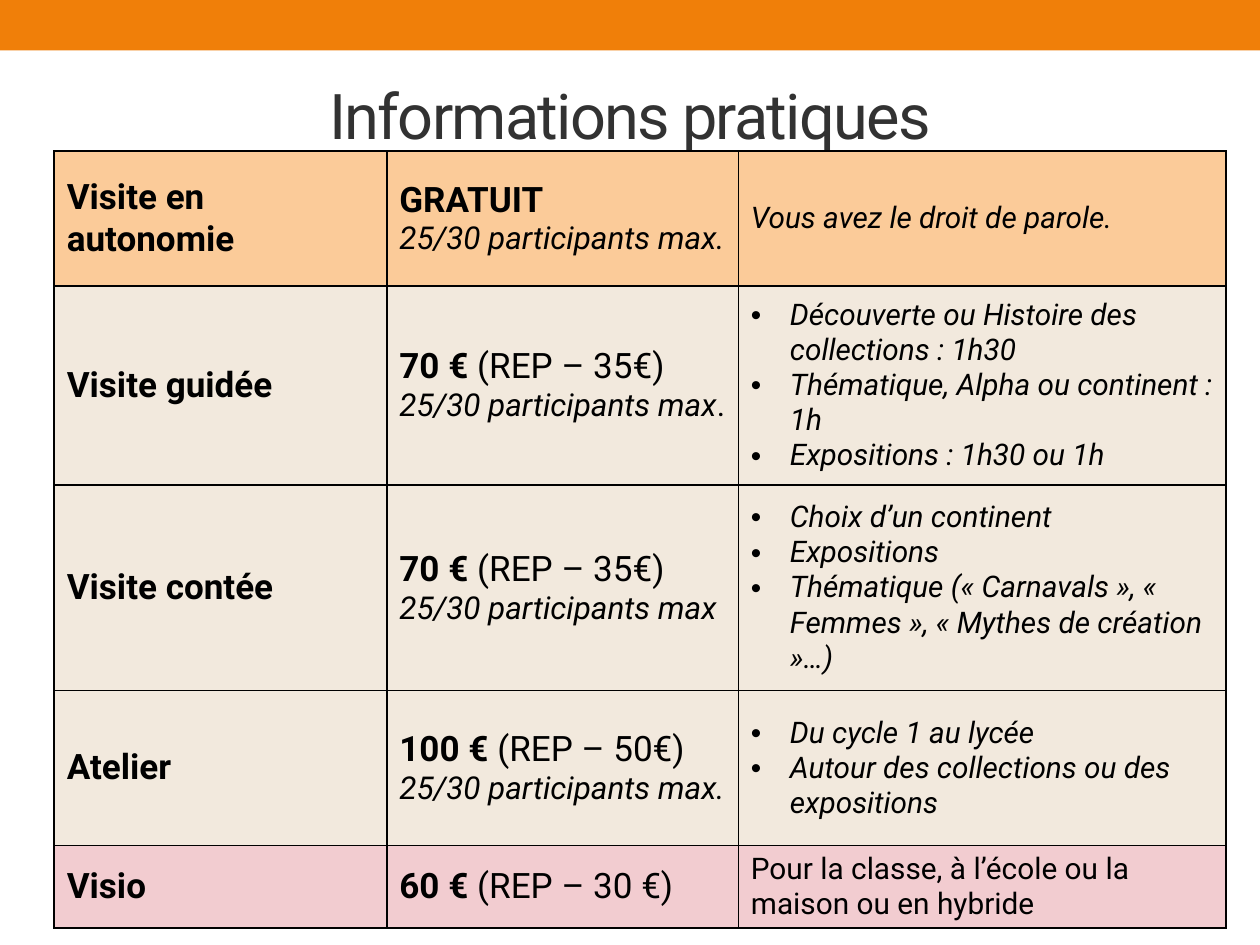
from dataclasses import dataclass

from lxml.etree import SubElement
from pptx import Presentation
from pptx.dml.color import RGBColor
from pptx.enum.shapes import MSO_SHAPE
from pptx.enum.text import MSO_ANCHOR, PP_ALIGN
from pptx.oxml.ns import qn
from pptx.util import Inches, Pt


@dataclass(frozen=True)
class Theme:
    font: str = "Roboto"
    bar: str = "F07F09"
    title: str = "323232"
    ink: str = "000000"
    free: str = "FBCB99"
    paid: str = "F2E9DD"
    remote: str = "F2CCD0"
    title_size: int = 36
    main_size: int = 20
    note_size: int = 18
    detail_size: int = 17


T = Theme()
COLUMNS = [2.64, 2.79, 3.87]
LIMIT = "25/30 participants max"
ROWS = [
    (1.07, T.free, "Visite en autonomie", ("GRATUIT", "", LIMIT + ".", ""),
     ["Vous avez le droit de parole."], {"italic": True}),
    (1.58, T.paid, "Visite guidée", ("70 € ", "(REP – 35€)", LIMIT, "."),
     ["Découverte ou Histoire des collections : 1h30",
      "Thématique, Alpha ou continent : 1h",
      "Expositions : 1h30 ou 1h"], {"italic": True, "bullet": True}),
    (1.63, T.paid, "Visite contée", ("70 € ", "(REP – 35€)", LIMIT, ""),
     ["Choix d’un continent",
      "Expositions",
      "Thématique (« Carnavals », « Femmes », « Mythes de création »…)"],
     {"italic": True, "bullet": True}),
    (1.23, T.paid, "Atelier", ("100 € ", "(REP – 50€)", LIMIT + ".", ""),
     ["Du cycle 1 au lycée",
      "Autour des collections ou des expositions"],
     {"italic": True, "bullet": True}),
    (0.65, T.remote, "Visio", ("60 € ", "(REP – 30 €)", "", ""),
     ["Pour la classe, à l’école ou la maison ou en hybride"], {}),
]


def rgb(color):
    return RGBColor.from_string(color)


def add_text(p, text, size=T.main_size, color=T.ink, bold=False, italic=False,
             bullet=False, spacing=None):
    if not text:
        return
    r = p.add_run()
    r.text = text
    f = r.font
    f.name, f.size, f.bold, f.italic = T.font, Pt(size), bold, italic
    f.color.rgb = rgb(color)
    if spacing is not None:
        r._r.get_or_add_rPr().set("spc", str(spacing * 100))
    if bullet:
        pPr = p._p.get_or_add_pPr()
        pPr.set("marL", str(Inches(0.31)))
        pPr.set("indent", str(-Inches(0.31)))
        SubElement(pPr, qn("a:buFont"), typeface="Arial")
        SubElement(pPr, qn("a:buChar"), char="•")


def add_bar(slide, width):
    sp = slide.shapes.add_shape(MSO_SHAPE.RECTANGLE, 0, 0, width, Inches(0.4))
    sp.shadow.inherit = False
    sp.fill.solid()
    sp.fill.fore_color.rgb = rgb(T.bar)
    sp.line.fill.background()


def set_title(slide, text):
    sp = slide.shapes.title
    sp.left, sp.top = Inches(0.5), Inches(0.58)
    sp.width, sp.height = Inches(9), Inches(0.65)
    tf = sp.text_frame
    tf.vertical_anchor = MSO_ANCHOR.MIDDLE
    p = tf.paragraphs[0]
    p.alignment = PP_ALIGN.CENTER
    add_text(p, text, size=T.title_size, color=T.title, spacing=-1)


def style_cell(cell, fill):
    cell.vertical_anchor = MSO_ANCHOR.MIDDLE
    tcPr = cell._tc.get_or_add_tcPr()
    for side in ("lnL", "lnR", "lnT", "lnB"):
        ln = SubElement(tcPr, qn(f"a:{side}"), w=str(Pt(1)))
        SubElement(SubElement(ln, qn("a:solidFill")), qn("a:srgbClr"), val=T.ink)
    cell.fill.solid()
    cell.fill.fore_color.rgb = rgb(fill)


def fill_price(tf, price, reduced, limit, ending):
    p = tf.paragraphs[0]
    add_text(p, price, bold=True)
    add_text(p, reduced)
    if limit:
        p = tf.add_paragraph()
        add_text(p, limit, size=T.note_size, italic=True)
        add_text(p, ending, size=T.note_size)


def fill_details(tf, lines, style):
    for i, line in enumerate(lines):
        p = tf.add_paragraph() if i else tf.paragraphs[0]
        add_text(p, line, size=T.detail_size, **style)


def add_visits(slide):
    heights = [row[0] for row in ROWS]
    table = slide.shapes.add_table(
        len(ROWS), len(COLUMNS), Inches(0.43), Inches(1.2),
        Inches(sum(COLUMNS)), Inches(sum(heights))).table
    table.first_row = table.horz_banding = False
    for column, width in zip(table.columns, COLUMNS):
        column.width = Inches(width)
    for row, (height, fill, visit, price, details, style) in zip(table.rows, ROWS):
        row.height = Inches(height)
        for cell in row.cells:
            style_cell(cell, fill)
        name_tf, price_tf, details_tf = [cell.text_frame for cell in row.cells]
        add_text(name_tf.paragraphs[0], visit, bold=True)
        fill_price(price_tf, *price)
        fill_details(details_tf, details, style)


def main():
    prs = Presentation()
    prs.slide_width, prs.slide_height = Inches(10), Inches(7.5)
    slide = prs.slides.add_slide(prs.slide_layouts[5])
    add_bar(slide, prs.slide_width)
    set_title(slide, "Informations pratiques")
    add_visits(slide)
    prs.save("out.pptx")


if __name__ == "__main__":
    main()
